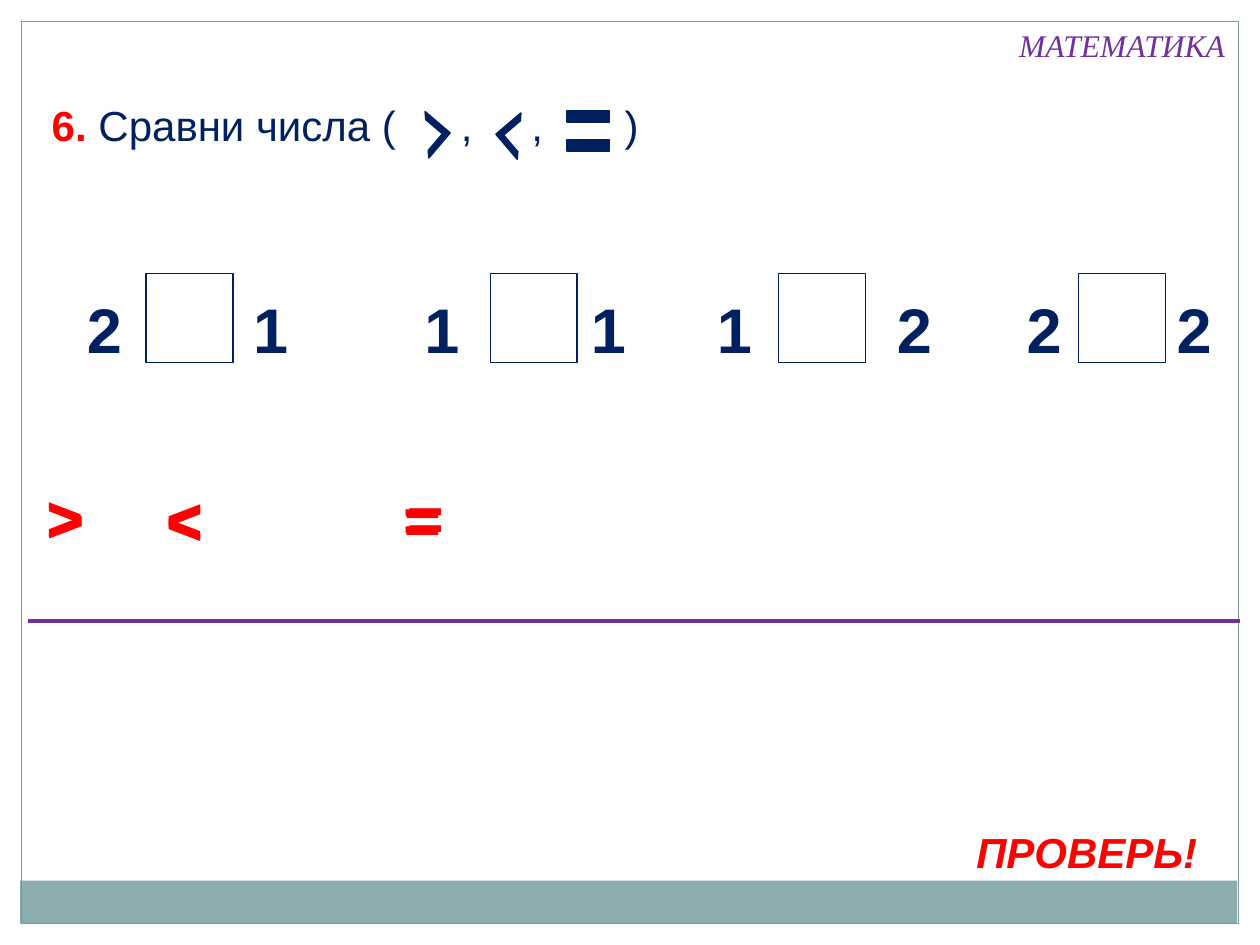
"""Build a maths slide on comparing numbers with the signs >, < and =."""
import pptx
import pptx.util
import pptx.dml.color
import pptx.enum.shapes
import pptx.enum.text
import lxml.etree

deck = pptx.Presentation()
deck.slide_width = pptx.util.Inches(10)
deck.slide_height = pptx.util.Inches(7.5)
COL = deck.slide_width / 100
ROW = deck.slide_height / 75
NAVY, RED, PURPLE, TEAL, FRAME = "002060", "FF0000", "7030A0", "8CADAE", "7C999A"
SHAPE = pptx.enum.shapes.MSO_SHAPE
rgb = pptx.dml.color.RGBColor.from_string
slide = deck.slides.add_slide(deck.slide_layouts[6])


def draw(kind, left, top, width, height, fill=None, line=None, weight=0.75):
    """Add a preset shape placed in grid columns and rows."""
    shape = slide.shapes.add_shape(
        kind, round(left * COL), round(top * ROW), round(width * COL), round(height * ROW))
    shape.shadow.inherit = False
    if fill:
        shape.fill.solid()
        shape.fill.fore_color.rgb = rgb(fill)
    else:
        shape.fill.background()
    if line:
        shape.line.color.rgb = rgb(line)
        shape.line.width = pptx.util.Pt(weight)
    else:
        shape.line.fill.background()
    return shape


def write(left, top, width, height, size, runs, font="Arial", wrap=True):
    """Add a text line whose runs are (text, colour, bold, italic)."""
    box = slide.shapes.add_textbox(
        round(left * COL), round(top * ROW), round(width * COL), round(height * ROW))
    box.text_frame.word_wrap = wrap
    box.text_frame.auto_size = pptx.enum.text.MSO_AUTO_SIZE.SHAPE_TO_FIT_TEXT
    paragraph = box.text_frame.paragraphs[0]
    for text, colour, bold, italic in runs:
        run = paragraph.add_run()
        run.text = text
        run.font.name = font
        run.font.size = pptx.util.Pt(size)
        run.font.color.rgb = rgb(colour)
        run.font.bold = bold
        run.font.italic = italic
    return paragraph


draw(SHAPE.RECTANGLE, 1.6, 69.9, 96.6, 3.4, fill=TEAL)
draw(SHAPE.RECTANGLE, 1.7, 1.7, 96.6, 71.6, line=FRAME)

task = write(2.2, 7.4, 96.3, 5, 24, [
    (" 6. ", RED, True, False),
    ("Сравни числа (\t,\t,\t)", NAVY, False, False)])
namespace = "{http://schemas.openxmlformats.org/drawingml/2006/main}"
tab_list = lxml.etree.SubElement(task._p.get_or_add_pPr(), namespace + "tabLst")
for sign_end in (33.4, 39, 46.4):
    lxml.etree.SubElement(
        tab_list, namespace + "tab", pos=str(round(sign_end * COL)), algn="l")

write(79.9, 1.6, 18.5, 4, 18, [("МАТЕМАТИКА", PURPLE, False, True)],
      font="Times New Roman", wrap=False)
write(76.5, 65.1, 20.8, 5, 24, [("ПРОВЕРЬ!", RED, True, True)])

divider = slide.shapes.add_connector(
    pptx.enum.shapes.MSO_CONNECTOR.STRAIGHT,
    round(2.2 * COL), round(49.3 * ROW), round(98.4 * COL), round(49.3 * ROW))
divider.line.color.rgb = rgb(PURPLE)
divider.line.width = pptx.util.Pt(2.25)
lxml.etree.SubElement(divider._element.spPr, namespace + "effectLst")

for left, top, angle, mirrored in ((39.9, 9.5, 319.6, False), (32.6, 9.4, 40.4, True)):
    angle_sign = draw(SHAPE.HALF_FRAME, left, top, 2.6, 2.6, NAVY, NAVY, 0.9)
    angle_sign.adjustments[0], angle_sign.adjustments[1] = 0.17, 0.16
    angle_sign.rotation = angle
    if mirrored:
        angle_sign._element.spPr.xfrm.set("flipH", "1")
equal_sign = draw(SHAPE.MATH_EQUAL, 44.4, 5.4, 4.6, 10, NAVY, NAVY, 0.9)
equal_sign.adjustments[0], equal_sign.adjustments[1] = 0.085, 0.146

comparisons = (
    ("2", 5.9, 11.6, "1", 19.1),
    ("1", 32.7, 38.9, "1", 45.9),
    ("1", 55.9, 61.8, "2", 70.2),
    ("2", 80.5, 85.6, "2", 92.4))
for first, first_left, answer_left, second, second_left in comparisons:
    for number, left in ((first, first_left), (second, second_left)):
        write(left, 22.6, 4.8, 7.1, 36, [(number, NAVY, True, False)], wrap=False)
    draw(SHAPE.RECTANGLE, answer_left, 21.7, 6.9, 7.1, line=NAVY)

answer_stacks = (
    (">", ((2.8, 37.6), (2.7, 37.4), (2.7, 37.6))),
    ("<", ((12.2, 37.6), (12.2, 37.8))),
    ("=", ((31, 37.6), (31.3, 37.5), (31.1, 37.7))))
for sign, places in answer_stacks:
    for left, top in places:
        write(left, top, 6.9, 7.1, 36, [(sign, RED, True, False)])

deck.save("out.pptx")
